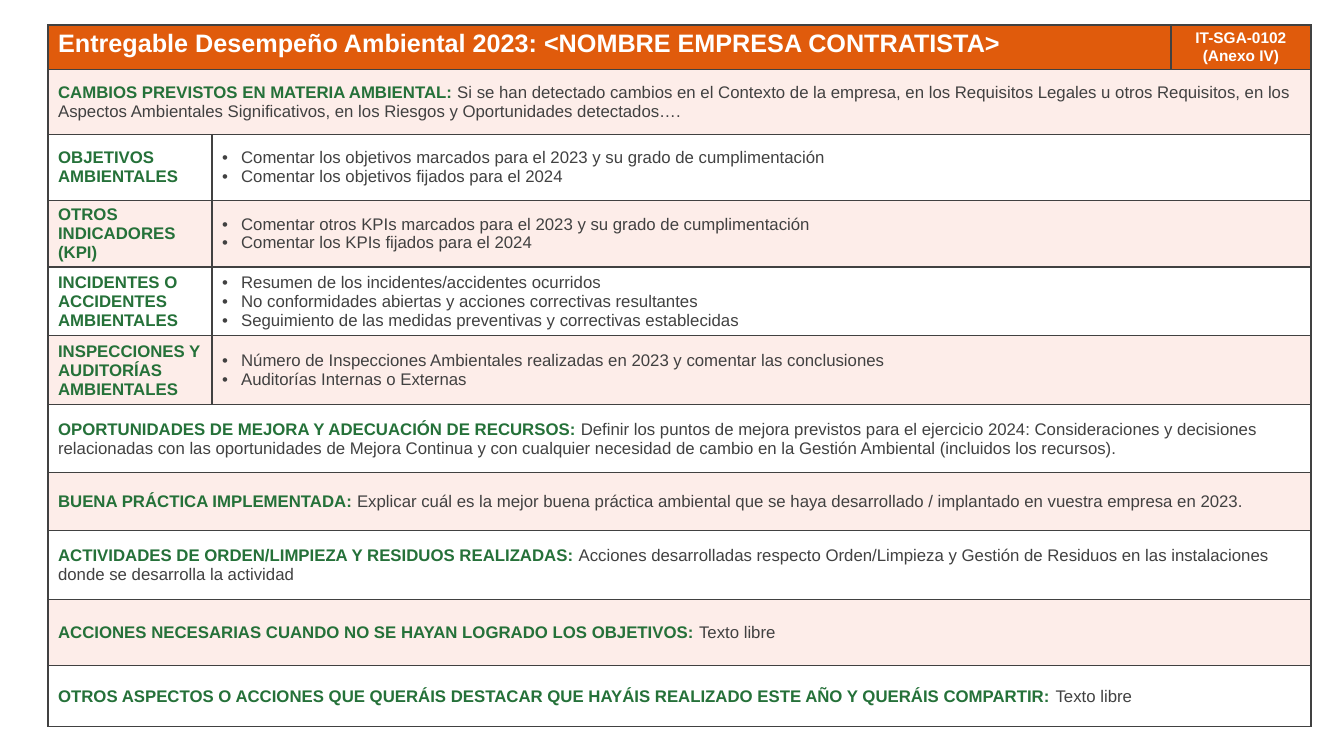
from lxml import etree
from pptx import Presentation, util as u
from pptx.dml.color import RGBColor
from pptx.enum import text
from pptx.oxml.ns import qn

INK = {"head": "E05B0C", "pale": "FDEDE9", "white": "FFFFFF",
       "green": "257139", "gray": "414141"}
FACE = "Arial"


def px(n):
    return u.Emu(round(n * 914400 / 100.8))


def style(font, size, ink, bold):
    font.name = FACE
    font.size = u.Pt(size)
    font.bold = bold
    font.color.rgb = RGBColor.from_string(INK[ink])


rows = [
    (65, "CAMBIOS PREVISTOS EN MATERIA AMBIENTAL: ",
     "Si se han detectado cambios en el Contexto de la empresa, en los Requisitos Legales u otros Requisitos, "
     "en los Aspectos Ambientales Significativos, en los Riesgos y Oportunidades detectados…."),
    (66, "OBJETIVOS AMBIENTALES",
     ["Comentar los objetivos marcados para el 2023 y su grado de cumplimentación",
      "Comentar los objetivos fijados para el 2024"]),
    (66, "OTROS INDICADORES (KPI)",
     ["Comentar otros KPIs marcados para el 2023 y su grado de cumplimentación",
      "Comentar los KPIs fijados para el 2024"]),
    (69, "INCIDENTES O ACCIDENTES AMBIENTALES",
     ["Resumen de los incidentes/accidentes ocurridos",
      "No conformidades abiertas y acciones correctivas resultantes",
      "Seguimiento de las medidas preventivas y correctivas establecidas"]),
    (69, "INSPECCIONES Y AUDITORÍAS AMBIENTALES",
     ["Número de Inspecciones Ambientales realizadas en 2023 y comentar las conclusiones",
      "Auditorías Internas o Externas"]),
    (68, "OPORTUNIDADES DE MEJORA Y ADECUACIÓN DE RECURSOS: ",
     "Definir los puntos de mejora previstos para el ejercicio 2024: Consideraciones y decisiones relacionadas "
     "con las oportunidades de Mejora Continua y con cualquier necesidad de cambio en la Gestión Ambiental "
     "(incluidos los recursos)."),
    (58, "BUENA PRÁCTICA IMPLEMENTADA: ",
     "Explicar cuál es la mejor buena práctica ambiental que se haya desarrollado / implantado en vuestra "
     "empresa en 2023."),
    (69, "ACTIVIDADES DE ORDEN/LIMPIEZA Y RESIDUOS REALIZADAS: ",
     "Acciones desarrolladas respecto Orden/Limpieza y Gestión de Residuos en las instalaciones donde se "
     "desarrolla la actividad"),
    (66, "ACCIONES NECESARIAS CUANDO NO SE HAYAN LOGRADO LOS OBJETIVOS: ", "Texto libre"),
    (61, "OTROS ASPECTOS O ACCIONES QUE QUERÁIS DESTACAR QUE HAYÁIS REALIZADO ESTE AÑO Y QUERÁIS COMPARTIR: ",
     "Texto libre"),
]
tall = [41] + [row[0] for row in rows]
wide = [164, 959, 140]

prs = Presentation()
prs.slide_width, prs.slide_height = px(1344), px(756)
slide = prs.slides.add_slide(prs.slide_layouts[6])
table = slide.shapes.add_table(len(tall), len(wide), px(48), px(25),
                               px(sum(wide)), px(sum(tall))).table
for col, size in zip(table.columns, wide):
    col.width = px(size)
for row, size in zip(table.rows, tall):
    row.height = px(size)

for r in range(len(tall)):
    for c in range(len(wide)):
        cell = table.cell(r, c)
        props = cell._tc.get_or_add_tcPr()
        for side in ("lnL", "lnR", "lnT", "lnB"):
            line = etree.SubElement(props, qn("a:" + side), w=str(u.Pt(1)))
            fill = etree.SubElement(line, qn("a:solidFill"))
            etree.SubElement(fill, qn("a:srgbClr"), val=INK["gray"])
        cell.fill.solid()
        tint = "head" if r == 0 else "pale" if r % 2 else "white"
        cell.fill.fore_color.rgb = RGBColor.from_string(INK[tint])
        if r:
            cell.vertical_anchor = text.MSO_ANCHOR.MIDDLE

title, code = table.cell(0, 0), table.cell(0, 2)
title.merge(table.cell(0, 1))
title.text = "Entregable Desempeño Ambiental 2023: <NOMBRE EMPRESA CONTRATISTA>"
style(title.text_frame.paragraphs[0].font, 18, "white", True)
code.text = "IT-SGA-0102\n(Anexo IV)"
for para in code.text_frame.paragraphs:
    para.alignment = text.PP_ALIGN.CENTER
    style(para.font, 11, "white", True)

for r, (_, label, body) in enumerate(rows, 1):
    first, last = table.cell(r, 0), table.cell(r, 2)
    para = first.text_frame.paragraphs[0]
    run = para.add_run()
    run.text = label
    style(run.font, 12, "green", True)
    if isinstance(body, str):
        first.merge(last)
        run = para.add_run()
        run.text = body
        style(run.font, 12, "gray", False)
        continue
    items = table.cell(r, 1)
    items.merge(last)
    items.text = "\n".join(body)
    for para in items.text_frame.paragraphs:
        props = para._p.get_or_add_pPr()
        props.set("marL", str(px(19)))
        props.set("indent", str(-px(19)))
        etree.SubElement(props, qn("a:buFont"), typeface=FACE)
        etree.SubElement(props, qn("a:buChar"), char="•")
        style(para.font, 12, "gray", False)

prs.save("out.pptx")
